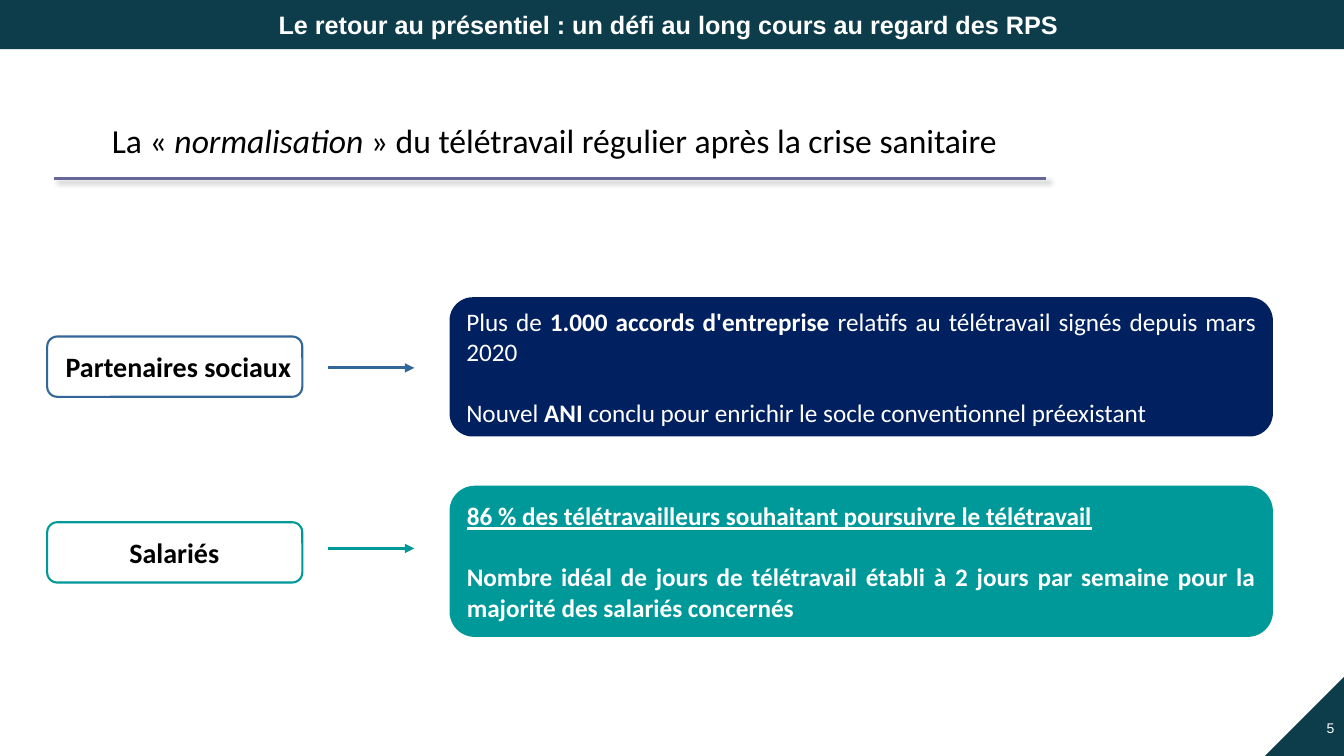
from lxml import etree
from pptx import Presentation
from pptx import util as u
from pptx.dml.color import RGBColor
from pptx.enum import shapes, text
from pptx.oxml import parse_xml
from pptx.oxml.ns import nsdecls, qn

Cm, Pt = u.Cm, u.Pt
SHAPE, ALIGN, ANCHOR = shapes.MSO_SHAPE, text.PP_ALIGN, text.MSO_ANCHOR
DARK, WHITE, BLACK = "0D3D4A", "FFFFFF", "000000"
NAVY, BLUE, TEAL, VIOLET = "002060", "336699", "009999", "666699"


def rgb(value):
    return RGBColor.from_string(value)


def write(p, runs, size, color, font="Calibri", align=ALIGN.LEFT):
    p.alignment = align
    for content, style in runs:
        r = p.add_run()
        r.text = content
        r.font.name, r.font.size = font, Pt(size)
        r.font.color.rgb = rgb(color)
        r.font.bold = "b" in style
        r.font.italic = "i" in style
        r.font.underline = "u" in style


prs = Presentation()
prs.slide_width, prs.slide_height = Cm(33.87), Cm(19.05)
s = prs.slides.add_slide(prs.slide_layouts[6])

band = s.shapes.add_shape(SHAPE.RECTANGLE, 0, 0, prs.slide_width, Cm(1.24))
corner = s.shapes.add_shape(SHAPE.RIGHT_TRIANGLE, Cm(31.85), Cm(17.02), Cm(2.06), Cm(2.06))
corner.rotation = 270
for sp in (band, corner):
    sp.shadow.inherit = False
    sp.fill.solid()
    sp.fill.fore_color.rgb = rgb(DARK)
    sp.line.fill.background()
band.text_frame.vertical_anchor = ANCHOR.MIDDLE
write(band.text_frame.paragraphs[0],
      [("Le retour au présentiel : un défi au long cours au regard des RPS ", "b")],
      18, WHITE, "Arial", ALIGN.CENTER)

number = s.shapes.add_textbox(Cm(25.98), Cm(18.01), Cm(7.9), Cm(1.02))
number.text_frame.word_wrap = True
write(number.text_frame.paragraphs[0], [("5", "")], 10, WHITE, "Arial", ALIGN.RIGHT)

rule = s.shapes.add_connector(shapes.MSO_CONNECTOR.STRAIGHT, Cm(1.37), Cm(4.5), Cm(26.37), Cm(4.5))
rule.line.color.rgb = rgb(VIOLET)
rule.line.width = Pt(2.25)
rule._element.spPr.append(parse_xml(
    f'<a:effectLst {nsdecls("a")}><a:outerShdw blurRad="50800" dist="38100" dir="2700000" '
    'algn="tl" rotWithShape="0"><a:srgbClr val="000000"><a:alpha val="40000"/></a:srgbClr>'
    '</a:outerShdw></a:effectLst>'))

title = s.shapes.add_textbox(Cm(2.57), Cm(2.9), Cm(23.01), Cm(1.27))
title.text_frame.word_wrap = False
write(title.text_frame.paragraphs[0],
      [("La « ", ""), ("normalisation ", "i"),
       ("» du télétravail régulier après la crise sanitaire", "")], 24, BLACK)

rows = [
    ("Partenaires sociaux", BLUE, 8.48, 6.25, 9.27, NAVY, 7.49, 3.51, [
        [("Plus de ", ""), ("1.000 accords d'entreprise ", "b"),
         ("relatifs au télétravail signés depuis mars 2020 ", "")],
        [("Nouvel ", ""), ("ANI", "b"),
         (" conclu pour enrichir le socle conventionnel préexistant", "")]]),
    ("Salariés", TEAL, 13.16, 6.05, 13.82, TEAL, 12.24, 3.81, [
        [("86 % des télétravailleurs souhaitant poursuivre le télétravail", "bu")],
        [("Nombre idéal de jours de télétravail établi à 2 jours par semaine "
          "pour la majorité des salariés concernés", "b")]]),
]
for name, color, box_top, label_width, arrow_y, fill, card_top, card_height, paragraphs in rows:
    card = s.shapes.add_shape(SHAPE.ROUNDED_RECTANGLE, Cm(11.33), Cm(card_top),
                              Cm(20.75), Cm(card_height))
    card.shadow.inherit = False
    card.fill.solid()
    card.fill.fore_color.rgb = rgb(fill)
    card.line.fill.background()
    tf = card.text_frame
    tf.vertical_anchor = ANCHOR.MIDDLE
    for i, runs in enumerate(paragraphs):
        p = tf.add_paragraph() if i else tf.paragraphs[0]
        p.space_before = Pt(22 * i)
        write(p, runs, 18, WHITE, align=ALIGN.JUSTIFY)

    arrow = s.shapes.add_connector(shapes.MSO_CONNECTOR.STRAIGHT, Cm(8.26), Cm(arrow_y),
                                   Cm(10.44), Cm(arrow_y))
    arrow.line.color.rgb = rgb(color)
    arrow.line.width = Pt(2.25)
    etree.SubElement(arrow.line._get_or_add_ln(), qn("a:tailEnd"), type="triangle")
    etree.SubElement(arrow._element.spPr, qn("a:effectLst"))

    box = s.shapes.add_shape(SHAPE.ROUNDED_RECTANGLE, Cm(1.19), Cm(box_top), Cm(6.43), Cm(1.52))
    box.shadow.inherit = False
    box.fill.background()
    box.line.color.rgb = rgb(color)
    box.line.width = Pt(1.5)

    label = s.shapes.add_textbox(Cm(1.37), Cm(box_top + 0.2), Cm(label_width), Cm(1.12))
    label.text_frame.word_wrap = name == "Salariés"
    write(label.text_frame.paragraphs[0], [(name, "b")], 20, BLACK, align=ALIGN.CENTER)

prs.save("out.pptx")
